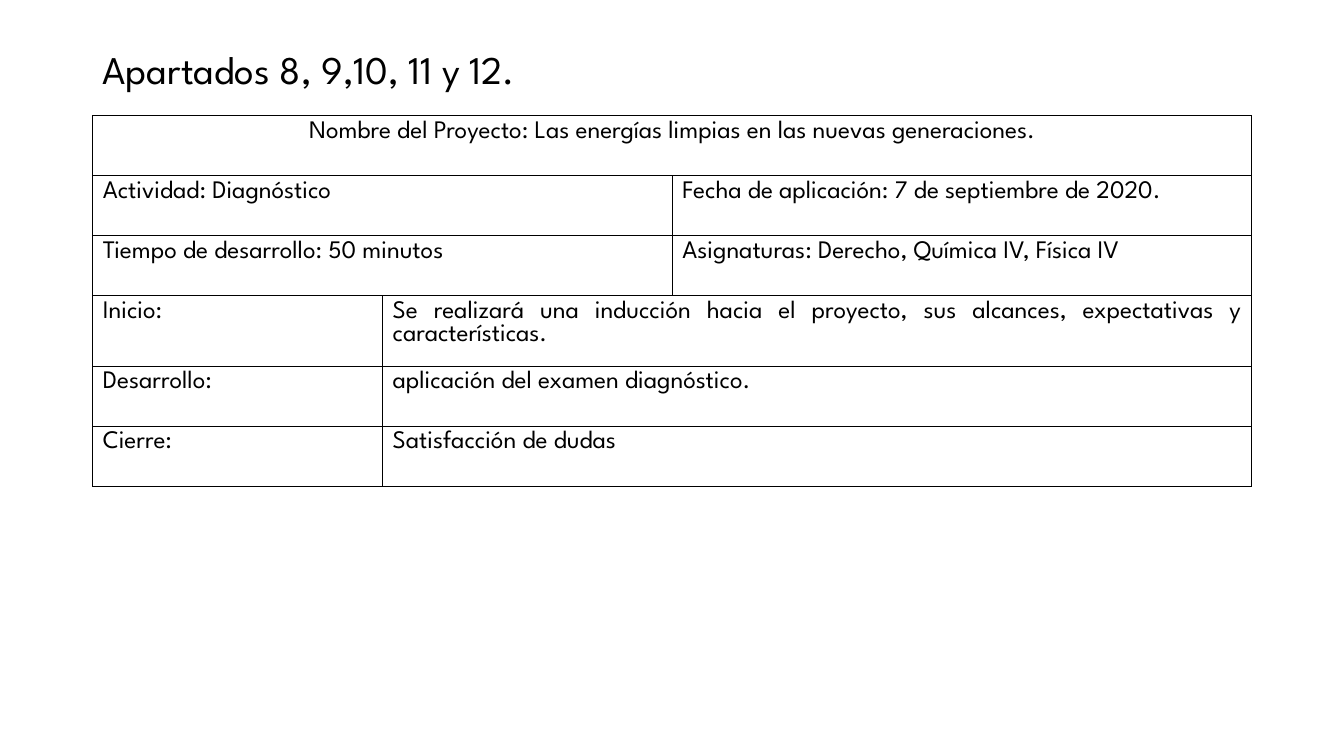
from lxml import etree
from pptx import Presentation
from pptx.dml.color import RGBColor
from pptx.enum import text as t
from pptx.oxml import ns
from pptx.util import Cm, Pt

TITLE = "Apartados 8, 9,10, 11 y 12."
LEFT, MID, JUST = t.PP_ALIGN.LEFT, t.PP_ALIGN.CENTER, t.PP_ALIGN.JUSTIFY
# Each row lists its cells as (text, columns spanned, alignment)
ROWS = [
    [("Nombre del Proyecto: Las energías limpias en las nuevas generaciones.", 3, MID)],
    [("Actividad: Diagnóstico", 2, LEFT),
     ("Fecha de aplicación: 7 de septiembre de 2020.", 1, JUST)],
    [("Tiempo de desarrollo: 50 minutos", 2, LEFT),
     ("Asignaturas: Derecho, Química IV, Física IV", 1, JUST)],
    [("Inicio:", 1, LEFT),
     ("Se realizará una inducción hacia el proyecto, sus alcances, "
      "expectativas y características.", 2, JUST)],
    [("Desarrollo:", 1, LEFT), ("aplicación del examen diagnóstico.", 2, JUST)],
    [("Cierre:", 1, LEFT), ("Satisfacción de dudas", 2, JUST)],
]
FONT = "League Spartan"
COLORS = {"ink": "000000"}
X, WIDE = 2.34, 29.21
ROW_H = 1.51
SHARES = [1, 1, 2]


def style(para, size, align=LEFT):
    para.alignment = align
    para.font.name = FONT
    para.font.size = Pt(size)
    para.font.color.rgb = RGBColor.from_string(COLORS["ink"])


def frame(cell):
    """Give the cell thin lines on all four sides and no fill."""
    props = cell._tc.get_or_add_tcPr()
    for side in ("lnL", "lnR", "lnT", "lnB"):
        line = etree.SubElement(props, ns.qn(f"a:{side}"), w=str(Pt(1)))
        fill = etree.SubElement(line, ns.qn("a:solidFill"))
        etree.SubElement(fill, ns.qn("a:srgbClr"), val=COLORS["ink"])
    cell.fill.background()


def add_title(slide):
    box = slide.shapes.add_textbox(Cm(X), Cm(1.02), Cm(WIDE), Cm(1.45)).text_frame
    box.word_wrap = True
    box.vertical_anchor = t.MSO_ANCHOR.MIDDLE
    box.text = TITLE
    style(box.paragraphs[0], 28)


def add_plan(slide):
    grid = slide.shapes.add_table(len(ROWS), len(SHARES), Cm(X), Cm(2.92),
                                  Cm(WIDE), Cm(ROW_H * len(ROWS))).table
    grid.first_row = grid.horz_banding = False
    for col, share in zip(grid.columns, SHARES):
        col.width = Cm(WIDE * share / sum(SHARES))
    for cell in grid.iter_cells():
        frame(cell)
    for r, row in enumerate(ROWS):
        grid.rows[r].height = Cm(ROW_H)
        c = 0
        for words, span, align in row:
            cell = grid.cell(r, c)
            if span > 1:
                cell.merge(grid.cell(r, c + span - 1))
            cell.text = words
            style(cell.text_frame.paragraphs[0], 18, align)
            c += span


def main():
    deck = Presentation()
    deck.slide_width, deck.slide_height = Cm(33.87), Cm(19.05)
    slide = deck.slides.add_slide(deck.slide_layouts[6])
    add_title(slide)
    add_plan(slide)
    deck.save("out.pptx")


if __name__ == "__main__":
    main()
